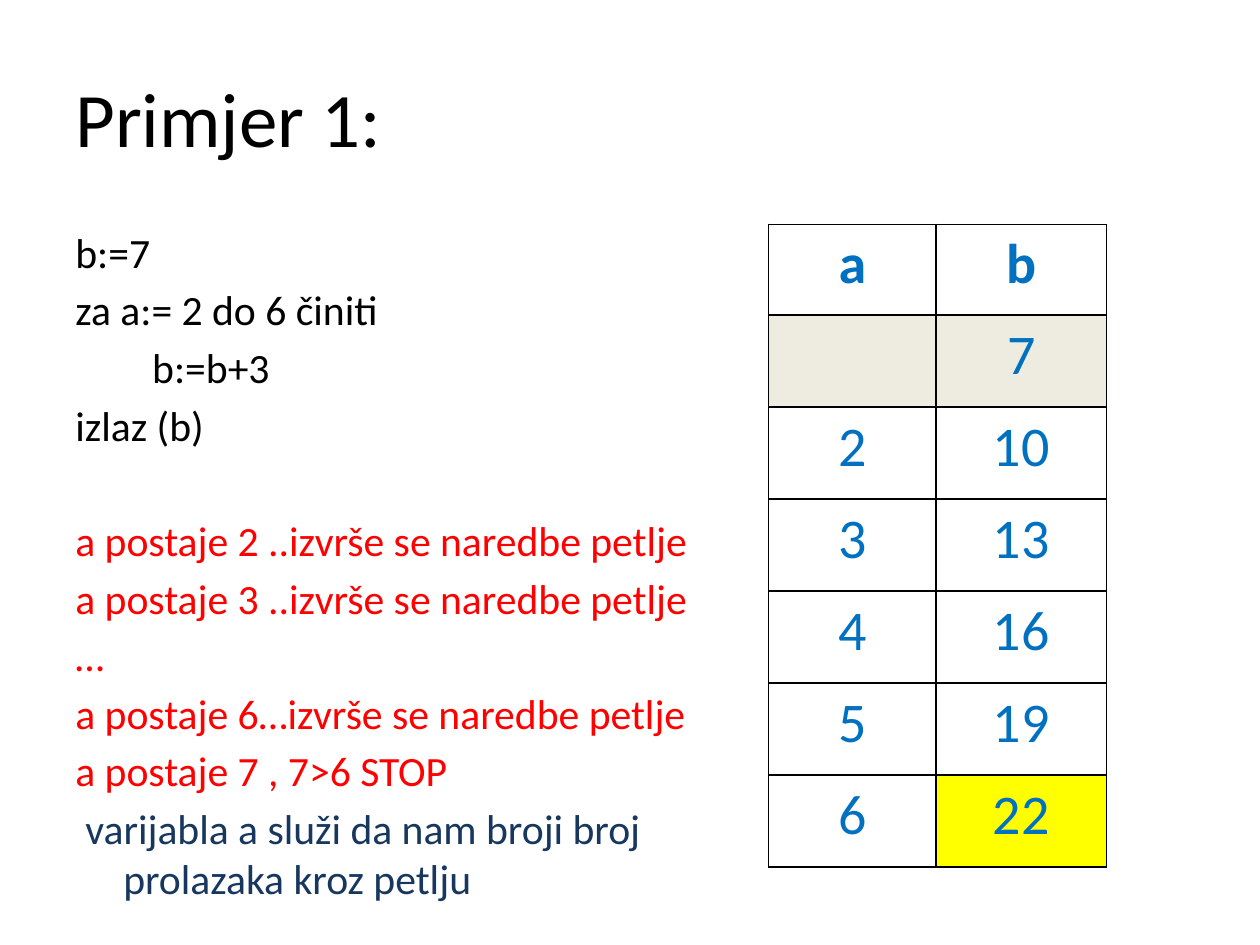
from lxml import etree
from pptx import Presentation
from pptx.dml.color import RGBColor
from pptx.enum import text
from pptx.oxml import ns
from pptx.util import Inches, Pt

BLACK, RED, NAVY, BLUE = "000000", "FF0000", "17375E", "0070C0"
WHITE, BEIGE, YELLOW = "FFFFFF", "EEECE1", "FFFF00"
LINE_GAP = 4.3
SECTION_GAP = 37.6

ALGORITHM = [
    ("b:=7", {}),
    ("za a:= 2 do 6 činiti", {}),
    ("b:=b+3", {"margin": 0.61, "indent": 0}),
    ("izlaz (b)", {}),
    ("a postaje 2 ..izvrše se naredbe petlje", {"color": RED, "before": SECTION_GAP}),
    ("a postaje 3 ..izvrše se naredbe petlje", {"color": RED}),
    ("…", {"color": RED}),
    ("a postaje 6…izvrše se naredbe petlje", {"color": RED}),
    ("a postaje 7 , 7>6 STOP", {"color": RED}),
    ("varijabla a služi da nam broji broj prolazaka kroz petlju",
     {"color": NAVY, "indent": -0.3}),
]

TRACE = [("a", "b"), ("", "7"), ("2", "10"), ("3", "13"),
         ("4", "16"), ("5", "19"), ("6", "22")]


def rgb(color):
    return RGBColor.from_string(color)


def write(paragraph, wording, size=23.8, color=BLACK, bold=False, before=0,
          margin=0, indent=0, align=text.PP_ALIGN.LEFT):
    paragraph.alignment = align
    paragraph.space_before = Pt(before)
    properties = paragraph._p.get_or_add_pPr()
    properties.set("marL", str(Inches(margin)))
    properties.set("indent", str(Inches(indent)))
    font = paragraph.font
    if wording:
        run = paragraph.add_run()
        run.text = wording
        font = run.font
    font.name = "Calibri"
    font.size = Pt(size)
    font.bold = bold
    font.color.rgb = rgb(color)


def add_text_frame(slide, left, top, width, height, anchor=text.MSO_ANCHOR.TOP):
    frame = slide.shapes.add_textbox(
        Inches(left), Inches(top), Inches(width), Inches(height)).text_frame
    frame.word_wrap = True
    frame.vertical_anchor = anchor
    return frame


def add_title(slide):
    title = add_text_frame(slide, 0.5, 0.3, 9, 1.25, text.MSO_ANCHOR.MIDDLE)
    write(title.paragraphs[0], "Primjer 1:", size=44)


def add_algorithm(slide):
    body = add_text_frame(slide, 0.5, 1.75, 5.21, 4.95)
    for number, (wording, style) in enumerate(ALGORITHM):
        line = body.add_paragraph() if number else body.paragraphs[0]
        layout = {"before": LINE_GAP, "margin": 0.38, "indent": -0.38}
        write(line, wording, **{**layout, **style})


def add_borders(cell):
    properties = cell._tc.get_or_add_tcPr()
    for position, side in enumerate(("lnL", "lnR", "lnT", "lnB")):
        border = etree.Element(ns.qn(f"a:{side}"), w=str(Pt(1)))
        fill = etree.SubElement(border, ns.qn("a:solidFill"))
        etree.SubElement(fill, ns.qn("a:srgbClr"), val=BLACK)
        properties.insert(position, border)


def add_trace_table(slide):
    table = slide.shapes.add_table(
        len(TRACE), 2, Inches(6.1), Inches(1.78), Inches(2.68), Inches(5.12)).table
    for column, width in zip(table.columns, (1.33, 1.35)):
        column.width = Inches(width)
    row_fills = {1: BEIGE}
    for number, values in enumerate(TRACE):
        table.rows[number].height = Inches(0.73 if number else 0.72)
        for column, value in enumerate(values):
            cell = table.cell(number, column)
            cell.fill.solid()
            cell.fill.fore_color.rgb = rgb(row_fills.get(number, WHITE))
            write(cell.text_frame.paragraphs[0], value, size=32, color=BLUE,
                  bold=number == 0, align=text.PP_ALIGN.CENTER)
            add_borders(cell)
    final_result = table.cell(len(TRACE) - 1, 1)
    final_result.fill.fore_color.rgb = rgb(YELLOW)


def main():
    presentation = Presentation()
    presentation.slide_width = Inches(10)
    presentation.slide_height = Inches(7.5)
    slide = presentation.slides.add_slide(presentation.slide_layouts[6])
    add_title(slide)
    add_algorithm(slide)
    add_trace_table(slide)
    presentation.save("out.pptx")


if __name__ == "__main__":
    main()
